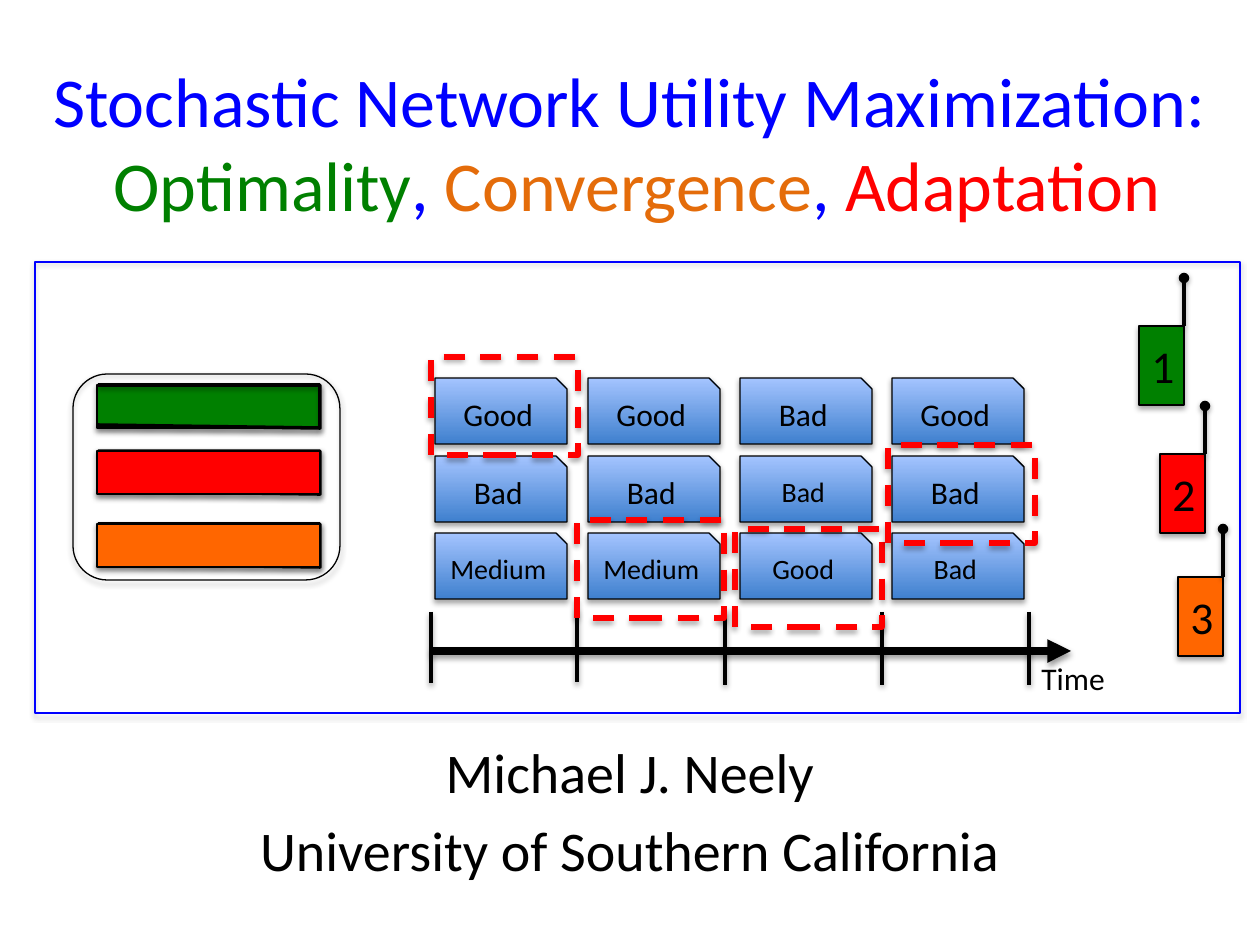
from dataclasses import dataclass

from lxml.etree import SubElement
from pptx import Presentation
from pptx.dml.color import RGBColor
from pptx.enum.dml import MSO_LINE
from pptx.enum.shapes import MSO_CONNECTOR, MSO_SHAPE
from pptx.enum.text import MSO_ANCHOR, PP_ALIGN
from pptx.oxml.ns import qn
from pptx.util import Emu, Pt

COLORS = {
    "black": "000000", "blue": "0000FF", "green": "008000", "red": "FF0000",
    "orange": "FF6600", "dark_orange": "E46C0A",
    "card_bottom": "3F80CE", "card_top": "A4C4FF",
}
FONT = "Calibri"


@dataclass(frozen=True)
class Box:
    left: int
    top: int
    width: int
    height: int


@dataclass(frozen=True)
class Receiver:
    label: str
    left: int
    top: int
    color: str


@dataclass(frozen=True)
class Card:
    label: str
    size: int = 18


def px(length: int) -> Emu:
    return Emu(round(length * 914400 / 126))


def rgb(name: str) -> RGBColor:
    return RGBColor.from_string(COLORS[name])


def cast_shadow(shape, opacity: int, distance: int) -> None:
    effects = SubElement(shape.element.spPr, qn("a:effectLst"))
    shadow = SubElement(effects, qn("a:outerShdw"), blurRad="40000",
                        dist=str(distance), dir="5400000", rotWithShape="0")
    black = SubElement(shadow, qn("a:srgbClr"), val=COLORS["black"])
    SubElement(black, qn("a:alpha"), val=str(opacity * 1000))


def write(frame, lines, *, size: int, anchor=MSO_ANCHOR.MIDDLE,
          align=PP_ALIGN.CENTER, before: float = 0, wrap: bool = True) -> None:
    """Fill a text frame; each line is a list of (text, color), "\\n" breaks it."""
    frame.word_wrap = wrap
    frame.vertical_anchor = anchor
    for index, line in enumerate(lines):
        paragraph = frame.paragraphs[0] if index == 0 else frame.add_paragraph()
        paragraph.alignment = align
        paragraph.space_before = Pt(before)
        for text, color in line:
            if text == "\n":
                paragraph.add_line_break()
                continue
            run = paragraph.add_run()
            run.text = text
            run.font.name = FONT
            run.font.size = Pt(size)
            run.font.color.rgb = rgb(color)


def add_text(slide, box: Box, lines, **text_format) -> None:
    area = slide.shapes.add_textbox(px(box.left), px(box.top), px(box.width), px(box.height))
    write(area.text_frame, lines, **text_format)


def add_box(shapes, box: Box, *, kind=MSO_SHAPE.RECTANGLE, fill: str = "",
            line: str = "black", weight: float = 0.75):
    shape = shapes.add_shape(kind, px(box.left), px(box.top), px(box.width), px(box.height))
    if fill:
        shape.fill.solid()
        shape.fill.fore_color.rgb = rgb(fill)
    else:
        shape.fill.background()
    shape.line.color.rgb = rgb(line)
    shape.line.width = Pt(weight)
    cast_shadow(shape, 35, 23000)
    return shape


def add_line(shapes, start: tuple[int, int], end: tuple[int, int], *,
             weight: float = 2, head: str = "") -> None:
    line = shapes.add_connector(MSO_CONNECTOR.STRAIGHT, *map(px, start + end))
    line.line.color.rgb = rgb("black")
    line.line.width = Pt(weight)
    if head:
        SubElement(line.element.spPr.find(qn("a:ln")), qn("a:tailEnd"), type=head)
    cast_shadow(line, 38, 20000)


def add_queue_outline(slide, box: Box) -> None:
    """Open outline along the top, right and slightly sloping bottom of a queue."""
    right, bottom = box.left + box.width, box.top + box.height
    builder = slide.shapes.build_freeform(px(box.left + 1), px(box.top), scale=1.0)
    corners = [(right, box.top), (right, bottom), (box.left, bottom - 3)]
    builder.add_line_segments([(px(x), px(y)) for x, y in corners], close=False)
    outline = builder.convert_to_shape()
    outline.fill.background()
    outline.line.color.rgb = rgb("black")
    outline.line.width = Pt(2)
    cast_shadow(outline, 38, 20000)


def add_receiver(slide, receiver: Receiver) -> None:
    shapes = slide.shapes.add_group_shape().shapes
    body = Box(receiver.left, receiver.top, 45, 79)
    block = add_box(shapes, body, fill=receiver.color)
    write(block.text_frame, [[(receiver.label, "black")]], size=26)
    antenna = body.left + body.width
    add_line(shapes, (antenna, body.top), (antenna, body.top - 48), head="oval")


def add_card(slide, left: int, top: int, card: Card) -> None:
    shape = add_box(slide.shapes, Box(left, top, 132, 66), kind=MSO_SHAPE.SNIP_1_RECTANGLE)
    shape.fill.gradient()
    shape.fill.gradient_angle = 90
    for stop, color in zip(shape.fill.gradient_stops, ("card_bottom", "card_top")):
        stop.color.rgb = rgb(color)
    write(shape.text_frame, [[(card.label, "black")]], size=card.size)


QUEUES = {color: Box(97, top, 223, 43)
          for color, top in (("green", 385), ("red", 451), ("orange", 524))}
RECEIVERS = (
    Receiver("1", 1139, 326, "green"),
    Receiver("2", 1160, 454, "red"),
    Receiver("3", 1178, 577, "orange"),
)
CARD_LEFTS = (435, 588, 740, 892)
CARD_ROWS = {
    378: (Card("Good"), Card("Good"), Card("Bad"), Card("Good")),
    456: (Card("Bad"), Card("Bad"), Card("Bad", 16), Card("Bad")),
    533: (Card("Medium", 16), Card("Medium", 16), Card("Good", 16), Card("Bad", 16)),
}
TICKS = ((431, 612, 683), (577, 609, 682), (725, 612, 685), (882, 612, 685), (1029, 612, 685))
CHOICES = ((431, 357), (577, 520), (735, 529), (888, 445))


def main() -> None:
    presentation = Presentation()
    presentation.slide_width, presentation.slide_height = px(1260), px(945)
    slide = presentation.slides.add_slide(presentation.slide_layouts[6])

    add_text(slide, Box(35, 39, 1188, 205), [[
        ("Stochastic Network Utility Maximization:", "blue"), ("\n", "blue"),
        (" ", "blue"), ("Optimality", "green"), (", ", "blue"),
        ("Convergence", "dark_orange"), (", ", "blue"), ("Adaptation", "red"),
    ]], size=40)
    add_text(slide, Box(189, 731, 882, 149), [
        [("Michael J. Neely", "black")],
        [("University of Southern California", "black")],
    ], size=32, anchor=MSO_ANCHOR.TOP, before=6.4)

    for receiver in RECEIVERS:
        add_receiver(slide, receiver)

    add_box(slide.shapes, QUEUES["green"], fill="green")
    add_box(slide.shapes, Box(73, 374, 267, 206), kind=MSO_SHAPE.ROUNDED_RECTANGLE)
    for queue in QUEUES.values():
        add_queue_outline(slide, queue)
    for color in ("red", "orange"):
        add_box(slide.shapes, QUEUES[color], fill=color)

    add_line(slide.shapes, (431, 651), (1071, 651), weight=4.5, head="triangle")
    for x, top, bottom in TICKS:
        add_line(slide.shapes, (x, top), (x, bottom))

    for top, cards in CARD_ROWS.items():
        for left, card in zip(CARD_LEFTS, cards):
            add_card(slide, left, top, card)

    add_box(slide.shapes, Box(35, 262, 1205, 451), line="blue")
    add_text(slide, Box(1029, 653, 89, 50), [[("Time", "black")]], size=18,
             anchor=MSO_ANCHOR.TOP, align=PP_ALIGN.LEFT, wrap=False)
    for left, top in CHOICES:
        choice = add_box(slide.shapes, Box(left, top, 147, 98), line="red", weight=3)
        choice.line.dash_style = MSO_LINE.DASH

    presentation.save("out.pptx")


if __name__ == "__main__":
    main()
